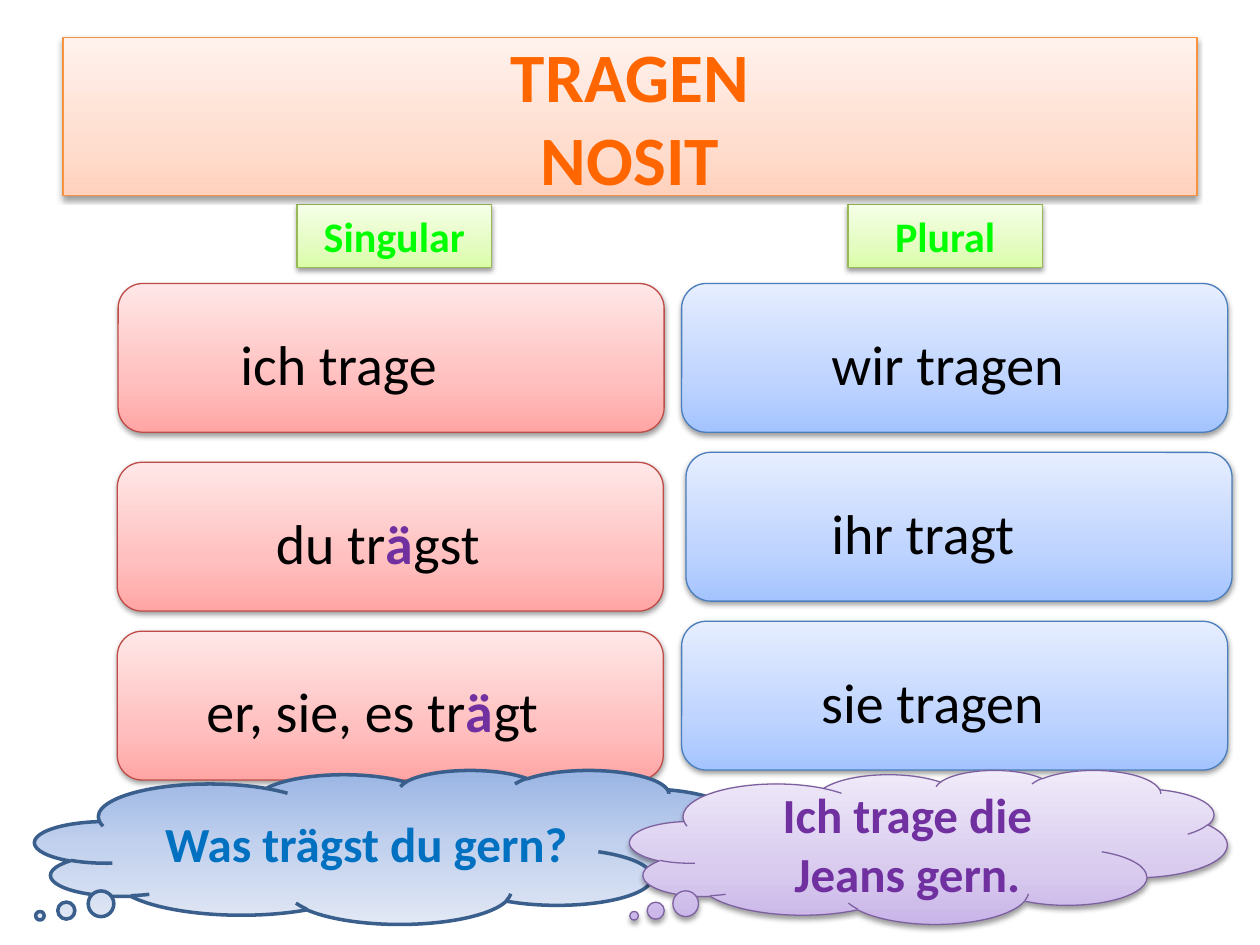
from dataclasses import dataclass, field
from typing import NamedTuple

from lxml.etree import SubElement
from pptx import Presentation
from pptx.dml.color import RGBColor
from pptx.enum.shapes import MSO_SHAPE
from pptx.enum.text import MSO_ANCHOR, PP_ALIGN
from pptx.oxml.ns import qn
from pptx.util import Pt


class Look(NamedTuple):
    stops: tuple[tuple[int, str], ...]
    line: str
    weight: float = 0.75
    angle: int = 270
    shadow: bool = True


@dataclass(frozen=True)
class Theme:
    font: str = "Calibri"
    title_size: float = 39.6
    heading_size: float = 24
    verb_size: float = 32
    cloud_size: float = 28
    title_ink: str = "FF6600"
    heading_ink: str = "00FF00"
    verb_ink: str = "000000"
    vowel_ink: str = "7030A0"
    question_ink: str = "0070C0"
    answer_ink: str = "7030A0"
    title: Look = Look(((0, "FFD2BD"), (35, "FFDED0"), (100, "FFF2ED")), "F69240")
    heading: Look = Look(((0, "DAFDA7"), (35, "E4FCC2"), (100, "F5FFE7")), "98B955")
    singular: Look = Look(((0, "FFA6A5"), (35, "FFC0BF"), (100, "FFE7E7")), "BF4C48")
    plural: Look = Look(((0, "A4C4FF"), (35, "BFD4FF"), (100, "E6EEFF")), "4B7EBC")
    question: Look = Look(((0, "9AB5E4"), (50, "C2D1ED"), (100, "E1E8F5")),
                          "3A5F8C", 2, 90, False)
    answer: Look = Look(((0, "C9B5E8"), (35, "D8CBEE"), (100, "F0EAF9")), "7D60A0")


class Box(NamedTuple):
    left: float
    top: float
    width: float
    height: float

    def lengths(self):
        return [Pt(value) for value in self]


class Span(NamedTuple):
    text: str
    size: float
    ink: str
    bold: bool = True


@dataclass(frozen=True)
class Panel:
    kind: MSO_SHAPE
    box: Box
    look: Look
    lines: tuple[Span, ...] = ()
    adjustments: tuple[float, ...] = ()


@dataclass(frozen=True)
class Verb:
    before: str
    box: Box
    vowel: str = ""
    after: str = ""
    spans: list[Span] = field(default_factory=list)


THEME = Theme()
CARD_WIDTH, CARD_HEIGHT = 312, 85
CARD_STEP = 96.5
HEADING_WIDTH, HEADING_HEIGHT = 111, 36
CLOUD_TOP, CLOUD_HEIGHT = 440, 88
CLOUD_TAIL = (-0.493, 0.447)


def add_color(parent, value: str, alpha: int | None = None) -> None:
    color = SubElement(parent, qn("a:srgbClr"), val=value)
    if alpha is not None:
        SubElement(color, qn("a:alpha"), val=str(alpha * 1000))


def paint(shape, look: Look) -> None:
    shape.shadow.inherit = False
    shape.fill.gradient()
    properties = shape.element.spPr
    gradient = properties.find(qn("a:gradFill"))
    for child in list(gradient):
        gradient.remove(child)
    stop_list = SubElement(gradient, qn("a:gsLst"))
    for position, color in look.stops:
        add_color(SubElement(stop_list, qn("a:gs"), pos=str(position * 1000)), color)
    SubElement(gradient, qn("a:lin"), ang=str(look.angle * 60000), scaled="0")
    shape.line.color.rgb = RGBColor.from_string(look.line)
    shape.line.width = Pt(look.weight)
    if look.shadow:
        shadow = SubElement(
            properties.find(qn("a:effectLst")), qn("a:outerShdw"),
            blurRad=str(Pt(3.1)), dist=str(Pt(1.6)), dir=str(90 * 60000),
            rotWithShape="0")
        add_color(shadow, "000000", 38)


def write(paragraph, span: Span) -> None:
    run = paragraph.add_run()
    run.text = span.text
    values = {"name": THEME.font, "size": Pt(span.size), "bold": span.bold}
    for attribute, value in values.items():
        setattr(run.font, attribute, value)
    run.font.color.rgb = RGBColor.from_string(span.ink)


def draw_panel(slide, panel: Panel) -> None:
    shape = slide.shapes.add_shape(panel.kind, *panel.box.lengths())
    for index, value in enumerate(panel.adjustments):
        shape.adjustments[index] = value
    paint(shape, panel.look)
    frame = shape.text_frame
    for attribute, value in {"word_wrap": True,
                             "vertical_anchor": MSO_ANCHOR.MIDDLE}.items():
        setattr(frame, attribute, value)
    paragraph = frame.paragraphs[0]
    paragraph.alignment = PP_ALIGN.CENTER
    for index, span in enumerate(panel.lines):
        if index:
            paragraph.add_line_break()
        write(paragraph, span)


def draw_verb(slide, verb: Verb) -> None:
    frame = slide.shapes.add_textbox(*verb.box.lengths()).text_frame
    frame.word_wrap = True
    parts = ((verb.before, THEME.verb_ink, False),
             (verb.vowel, THEME.vowel_ink, True),
             (verb.after, THEME.verb_ink, False))
    for text, ink, bold in parts:
        if text:
            write(frame.paragraphs[0], Span(text, THEME.verb_size, ink, bold))


def card(left: float, top: float, look: Look) -> Panel:
    return Panel(MSO_SHAPE.ROUNDED_RECTANGLE,
                 Box(left, top, CARD_WIDTH, CARD_HEIGHT), look)


def heading(text: str, left: float) -> Panel:
    return Panel(MSO_SHAPE.RECTANGLE,
                 Box(left, 116.8, HEADING_WIDTH, HEADING_HEIGHT), THEME.heading,
                 (Span(text, THEME.heading_size, THEME.heading_ink),))


def cloud(text: str, left: float, width: float, look: Look, ink: str) -> Panel:
    return Panel(MSO_SHAPE.CLOUD_CALLOUT,
                 Box(left, CLOUD_TOP, width, CLOUD_HEIGHT), look,
                 (Span(text, THEME.cloud_size, ink),), CLOUD_TAIL)


def main() -> None:
    deck = Presentation()
    deck.slide_width, deck.slide_height = Pt(720), Pt(540)
    slide = deck.slides.add_slide(deck.slide_layouts[6])

    singular_cards = [card(left, top, THEME.singular)
                      for left, top in ((67.5, 162), (67, 264.2), (67, 360.7))]
    plural_cards = [card(left, 162 + row * CARD_STEP, THEME.plural)
                    for row, left in enumerate((389.5, 392, 389.5))]
    verbs = [
        Verb("ich trage", Box(130.3, 185, 188, 46)),
        Verb("du tr", Box(150.5, 287.3, 166.3, 46), "ä", "gst"),
        Verb("er, sie, es tr", Box(110.9, 383.2, 226.8, 85), "ä", "gt"),
        Verb("wir tragen", Box(468, 185, 182.2, 46)),
        Verb("ihr tragt", Box(468, 281.5, 170.6, 46)),
        Verb("sie tragen", Box(462.2, 378, 198.7, 46)),
    ]
    title = Panel(MSO_SHAPE.RECTANGLE, Box(36, 21.6, 648, 90), THEME.title,
                  tuple(Span(text, THEME.title_size, THEME.title_ink)
                        for text in ("TRAGEN", "NOSIT")))
    foreground = [
        heading("Singular", 169.8), heading("Plural", 484.6), title,
        cloud("Was trägst du gern?", 20, 407.5, THEME.question, THEME.question_ink),
        cloud("Ich trage die Jeans gern.", 360, 341.3, THEME.answer, THEME.answer_ink),
    ]

    for panel in singular_cards + plural_cards:
        draw_panel(slide, panel)
    for verb in verbs:
        draw_verb(slide, verb)
    for panel in foreground:
        draw_panel(slide, panel)
    deck.save("out.pptx")


if __name__ == "__main__":
    main()
